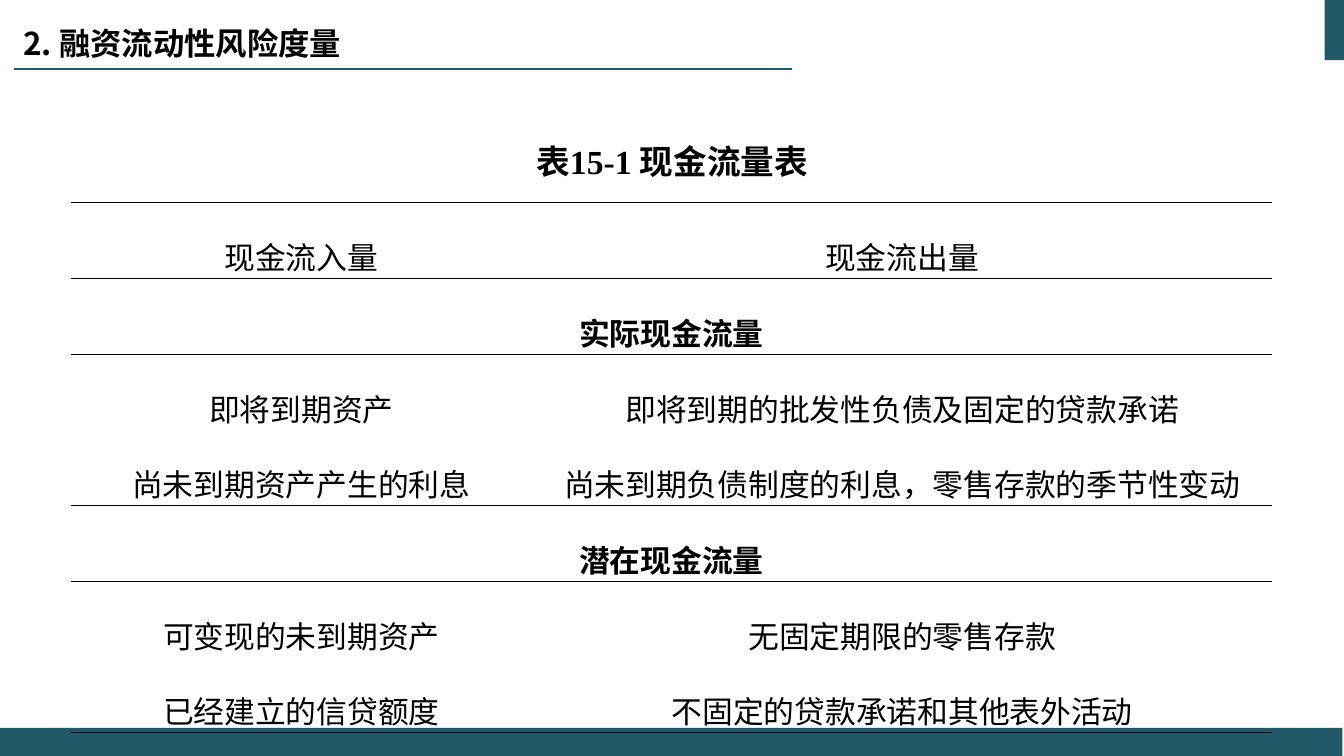
from lxml import etree
from pptx import Presentation
from pptx.dml.color import RGBColor
from pptx.enum.shapes import MSO_CONNECTOR, MSO_SHAPE
from pptx.enum.text import MSO_ANCHOR, MSO_AUTO_SIZE, PP_ALIGN
from pptx.oxml.ns import qn
from pptx.util import Cm, Pt

# Content: a row with one entry is a section heading across both columns
TITLE = "2. 融资流动性风险度量"
CAPTION = "表15-1 现金流量表"
ROWS = [
    ("现金流入量", "现金流出量"),
    ("实际现金流量",),
    ("即将到期资产", "即将到期的批发性负债及固定的贷款承诺"),
    ("尚未到期资产产生的利息", "尚未到期负债制度的利息，零售存款的季节性变动"),
    ("潜在现金流量",),
    ("可变现的未到期资产", "无固定期限的零售存款"),
    ("已经建立的信贷额度", "不固定的贷款承诺和其他表外活动"),
]

# Style
TEAL, BLACK, RULE = "215968", "000000", "000008"
SANS, SERIF = "Noto Sans CJK SC", "Times New Roman"
COL_WIDTHS = (10.36, 19.92)
ROW_HEIGHT = 1.58
BARS = [(33.38, 0, 0.5, 1.52), (0, 18.34, 33.83, 0.71)]
NO_STYLE = "{2D5ABB26-0587-4C30-8999-92F81FD0307C}"


def rgb(value):
    return RGBColor.from_string(value)


def add_run(p, text, size, font, bold=False):
    r = p.add_run()
    r.text = text
    r.font.size, r.font.bold, r.font.name = Pt(size), bold, font
    r.font.color.rgb = rgb(BLACK)
    etree.SubElement(r.font._element, qn("a:ea"), typeface=SANS)
    return r


def set_borders(cell, top, bottom):
    tc_pr = cell._tc.get_or_add_tcPr()
    for side, ruled in (("L", False), ("R", False), ("T", top), ("B", bottom)):
        ln = etree.SubElement(tc_pr, qn(f"a:ln{side}"), w=str(Pt(1)))
        if ruled:
            fill = etree.SubElement(ln, qn("a:solidFill"))
            etree.SubElement(fill, qn("a:srgbClr"), val=RULE)
        else:
            etree.SubElement(ln, qn("a:noFill"))


def is_ruled(edge):
    """Every edge has a rule except one between two ordinary rows."""
    if edge in (0, len(ROWS)):
        return True
    return len(ROWS[edge - 1]) == 1 or len(ROWS[edge]) == 1


prs = Presentation()
prs.slide_width, prs.slide_height = Cm(33.87), Cm(19.05)
slide = prs.slides.add_slide(prs.slide_layouts[5])
shapes = slide.shapes

# Corner and footer bars
for box in BARS:
    sp = shapes.add_shape(MSO_SHAPE.RECTANGLE, *map(Cm, box))
    sp.shadow.inherit = False
    sp.fill.solid()
    sp.fill.fore_color.rgb = rgb(TEAL)
    sp.line.fill.background()

# Rule under the title
rule = shapes.add_connector(MSO_CONNECTOR.STRAIGHT, Cm(19.96), Cm(1.73), Cm(0.36), Cm(1.73))
rule.line.color.rgb = rgb(TEAL)
rule.line.width = Pt(1.5)
etree.SubElement(rule._element.spPr, qn("a:effectLst"))

# Title
title = shapes.title
title.left, title.top, title.width, title.height = map(Cm, (0.33, -0.08, 21.11, 2.16))
tf = title.text_frame
tf.auto_size = MSO_AUTO_SIZE.NONE
tf.vertical_anchor = MSO_ANCHOR.MIDDLE
p = tf.paragraphs[0]
p.alignment = PP_ALIGN.LEFT
r = add_run(p, TITLE, 28, SANS, bold=True)
r.font._element.set("cap", "small")

# Cash flow table
table = shapes.add_table(len(ROWS), len(COL_WIDTHS), Cm(1.78), Cm(5.11),
                         Cm(sum(COL_WIDTHS)), Cm(ROW_HEIGHT * len(ROWS))).table
table.first_row = table.horz_banding = False
table._tbl.tblPr.find(qn("a:tableStyleId")).text = NO_STYLE
for col, width in zip(table.columns, COL_WIDTHS):
    col.width = Cm(width)

for i, texts in enumerate(ROWS):
    table.rows[i].height = Cm(ROW_HEIGHT)
    section = len(texts) == 1
    if section:
        table.cell(i, 0).merge(table.cell(i, 1))
    for cell in table.rows[i].cells:
        set_borders(cell, is_ruled(i), is_ruled(i + 1))
        cell.fill.background()
        cell.margin_left = cell.margin_right = Cm(0.18)
        cell.margin_top = cell.margin_bottom = 0
        cell.vertical_anchor = MSO_ANCHOR.MIDDLE
    for j, text in enumerate(texts):
        p = table.cell(i, j).text_frame.paragraphs[0]
        p.alignment = PP_ALIGN.CENTER
        p.line_spacing = 1.7
        if not section:
            p._p.get_or_add_pPr().set("indent", str(Cm(1.27)))
        add_run(p, text, 22, SERIF, bold=section)

# Table caption
caption = shapes.add_textbox(Cm(9.88), Cm(2.92), Cm(14.12), Cm(1.8))
tf = caption.text_frame
tf.word_wrap = True
tf.auto_size = MSO_AUTO_SIZE.SHAPE_TO_FIT_TEXT
p = tf.paragraphs[0]
p.alignment = PP_ALIGN.CENTER
p.line_spacing = 1.5
add_run(p, CAPTION, 24, SERIF, bold=True)

prs.save("out.pptx")
